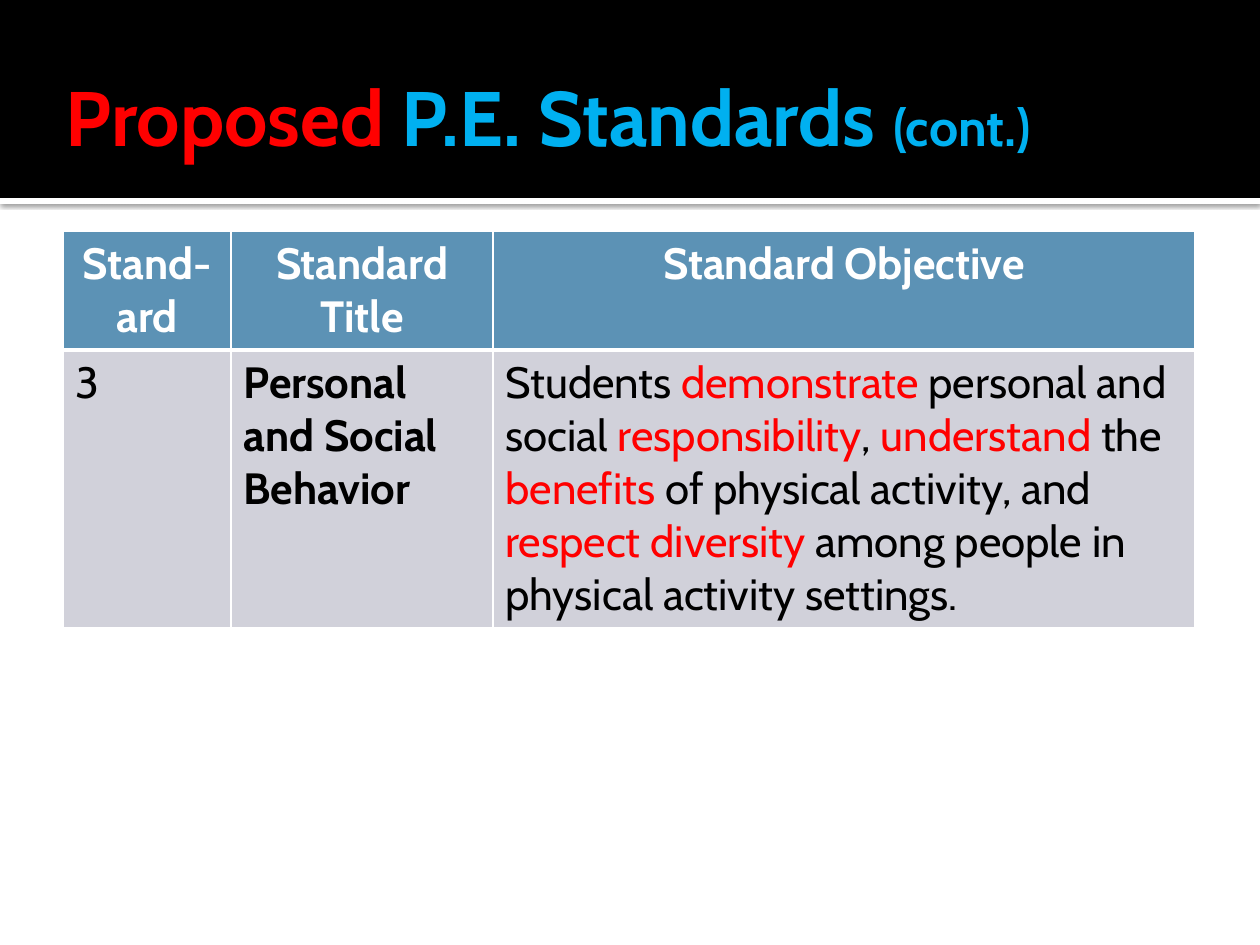
from typing import NamedTuple

from lxml import etree
from pptx import Presentation
from pptx.dml.color import RGBColor
from pptx.enum.shapes import MSO_SHAPE
from pptx.enum.text import MSO_ANCHOR, MSO_AUTO_SIZE, PP_ALIGN
from pptx.oxml.ns import qn
from pptx.util import Emu, Pt

RECTANGLE = MSO_SHAPE.RECTANGLE
LEFT, CENTER = PP_ALIGN.LEFT, PP_ALIGN.CENTER
MIDDLE, NO_FIT = MSO_ANCHOR.MIDDLE, MSO_AUTO_SIZE.NONE
TITLE_ONLY = 5
EMU_PER_PX = 914400 / 126
FONT = "Cabin"
WHITE, BLACK, RED, SKY = "FFFFFF", "000000", "FF0000", "00B0F0"
HEADER_FILL, BODY_FILL = "5C92B5", "D1D1DA"
TABLE_SIZE = 25


class Box(NamedTuple):
    left: int
    top: int
    width: int
    height: int


class Span(NamedTuple):
    text: str
    color: str = BLACK
    bold: bool = False
    size: float = TABLE_SIZE


def px(length: float) -> Emu:
    return Emu(round(length * EMU_PER_PX))


def rgb(color: str) -> RGBColor:
    return RGBColor.from_string(color)


def set_all(target, values: dict) -> None:
    for name, value in values.items():
        setattr(target, name, value)


def write_spans(para, spans: list[Span], alignment=LEFT) -> None:
    para.alignment = alignment
    for span in spans:
        run = para.add_run()
        run.text = span.text
        set_all(run.font, {"name": FONT, "size": Pt(span.size), "bold": span.bold})
        run.font.color.rgb = rgb(span.color)


def add_band(page, box: Box, color: str):
    band = page.shapes.add_shape(RECTANGLE, *map(px, box))
    band.shadow.inherit = False
    band.fill.solid()
    band.fill.fore_color.rgb = rgb(color)
    band.line.fill.background()
    return band


def add_shadow(shape, blur: float, distance: float, opacity: int) -> None:
    """Cast a black shadow straight down; blur and distance are in points."""
    effects = shape.element.spPr.find(qn("a:effectLst"))
    shadow = etree.SubElement(effects, qn("a:outerShdw"), blurRad=str(Pt(blur)),
                              dist=str(Pt(distance)), dir="5400000", algn="tl", rotWithShape="0")
    color = etree.SubElement(shadow, qn("a:srgbClr"), val=BLACK)
    etree.SubElement(color, qn("a:alpha"), val=str(opacity * 1000))


def set_borders(cell, widths: dict[str, int]) -> None:
    """Give each side (L, R, T, B) a white line of the given points."""
    properties = cell._tc.get_or_add_tcPr()
    for index, (side, width) in enumerate(widths.items()):
        line = etree.Element(qn(f"a:ln{side}"), w=str(Pt(width)))
        fill = etree.SubElement(line, qn("a:solidFill"))
        etree.SubElement(fill, qn("a:srgbClr"), val=WHITE)
        properties.insert(index, line)


def fill_cell(cell, spans: list[Span], is_header: bool) -> None:
    write_spans(cell.text_frame.paragraphs[0], spans, CENTER if is_header else LEFT)
    cell.fill.solid()
    cell.fill.fore_color.rgb = rgb(HEADER_FILL if is_header else BODY_FILL)
    top, bottom = (1, 3) if is_header else (3, 1)
    set_borders(cell, {"L": 1, "R": 1, "T": top, "B": bottom})


def add_standards_table(page, box: Box, widths: list[int], heights: list[int],
                        rows: list[list[list[Span]]]) -> None:
    table = page.shapes.add_table(len(rows), len(widths), *map(px, box)).table
    for column, width in zip(table.columns, widths):
        column.width = px(width)
    for row, height in zip(table.rows, heights):
        row.height = px(height)
    for row_index, row in enumerate(rows):
        for column_index, spans in enumerate(row):
            fill_cell(table.cell(row_index, column_index), spans, row_index == 0)


def place_title(page, box: Box, spans: list[Span]) -> None:
    title = page.shapes.title
    set_all(title, dict(zip(Box._fields, map(px, box))))
    frame = title.text_frame
    set_all(frame, {"vertical_anchor": MIDDLE, "auto_size": NO_FIT, "word_wrap": True,
                    "margin_left": Pt(7.2), "margin_right": Pt(3.6),
                    "margin_top": Pt(3.6), "margin_bottom": Pt(3.6)})
    write_spans(frame.paragraphs[0], spans, LEFT)
    title.element.getparent().append(title.element)  # in front of the band


HEADINGS = ["Stand-ard", "Standard Title", "Standard Objective"]
OBJECTIVE = [
    Span("Students "), Span("demonstrate", RED), Span(" personal and social "),
    Span("responsibility", RED), Span(", "), Span("understand", RED), Span(" the "),
    Span("benefits", RED), Span(" of physical activity, and "),
    Span("respect diversity ", RED), Span("among people in physical activity settings."),
]
ROWS = [
    [[Span(heading, WHITE, True)] for heading in HEADINGS],
    [[Span("3")], [Span("Personal and Social Behavior", bold=True)], OBJECTIVE],
]
TITLE = [Span("Proposed ", RED, True, 44.1), Span("P.E. Standards ", SKY, True, 44.1),
         Span("(cont.)", SKY, True, 29.7)]


def main() -> None:
    deck = Presentation()
    set_all(deck, {"slide_width": px(1260), "slide_height": px(945)})
    page = deck.slides.add_slide(deck.slide_layouts[TITLE_ONLY])
    strip = add_band(page, Box(0, 198, 1260, 6), WHITE)
    add_shadow(strip, blur=2.5, distance=0.8, opacity=60)
    add_band(page, Box(0, 0, 1260, 198), BLACK)
    place_title(page, Box(53, 63, 1134, 105), TITLE)
    add_standards_table(page, Box(63, 231, 1132, 394), [168, 262, 702], [117, 277], ROWS)
    deck.save("out.pptx")


if __name__ == "__main__":
    main()
